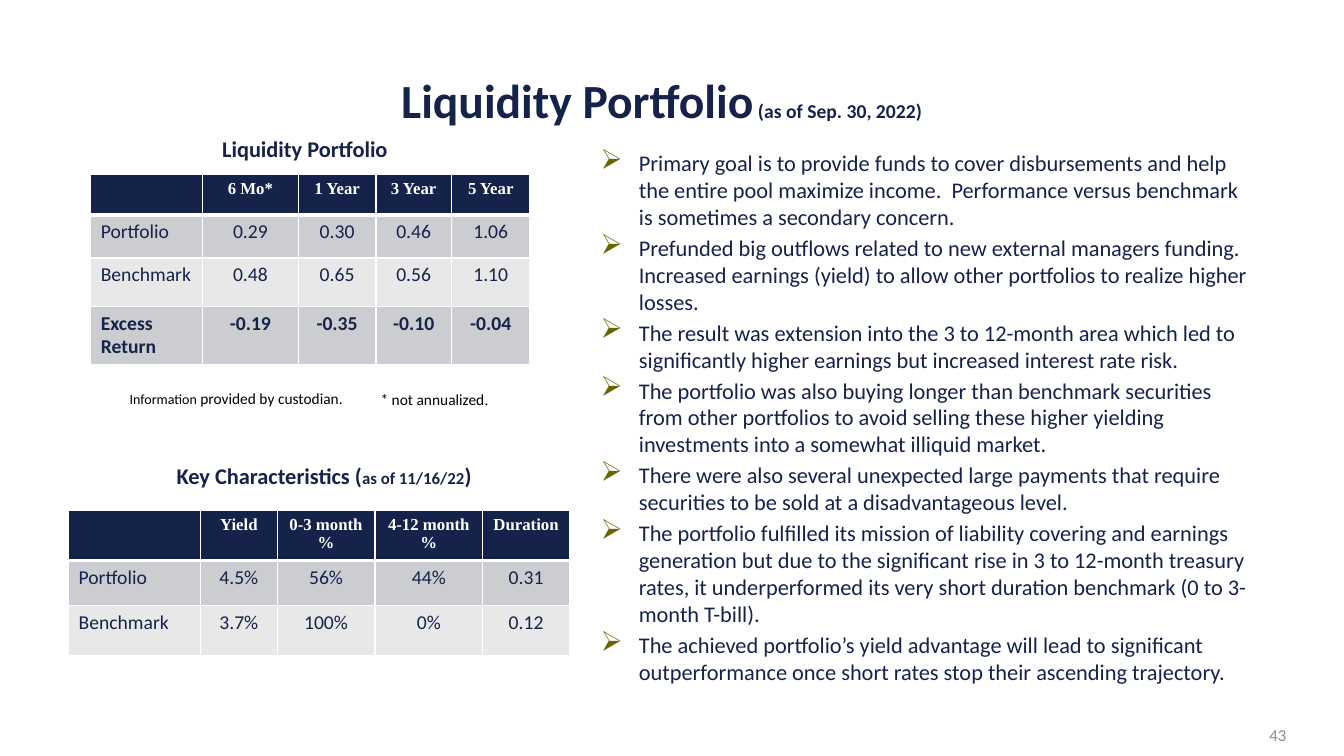
from dataclasses import dataclass
from typing import NamedTuple

from lxml.etree import SubElement
from pptx import Presentation
from pptx.dml.color import RGBColor
from pptx.enum.text import MSO_ANCHOR as Anchor, MSO_AUTO_SIZE as AutoSize, PP_ALIGN as Align
from pptx.oxml.ns import qn
from pptx.util import Inches, Pt

COLS, ROWS = 80, 45
UNIT = Inches(13.33) / COLS


@dataclass(frozen=True)
class Theme:
    navy: str = "15234A"
    white: str = "FFFFFF"
    black: str = "000000"
    bands: tuple = ("CCCDD0", "E8E8E9")
    olive: str = "666600"
    grey: str = "8C8D96"
    sans: str = "Calibri"
    serif: str = "Times New Roman"
    title: int = 34
    body: int = 16
    cell: int = 14
    small: int = 12
    note: int = 11
    fine: int = 10


T = Theme()


class Box(NamedTuple):
    """Left, top, width and height in grid units."""
    x: float
    y: float
    w: float
    h: float

    def emu(self):
        return [units(v) for v in self]


def units(n):
    return round(n * UNIT)


def add_run(p, text, size, color=T.navy, bold=False, font=T.sans):
    r = p.add_run()
    r.text = text
    r.font.size, r.font.bold, r.font.name = Pt(size), bold, font
    r.font.color.rgb = RGBColor.from_string(color)


def add_text(s, box, runs, align=Align.CENTER, anchor=Anchor.TOP, grow=True):
    """Place a one-paragraph text box; each run holds the arguments of add_run."""
    tf = s.shapes.add_textbox(*box.emu()).text_frame
    tf.word_wrap, tf.vertical_anchor = True, anchor
    tf.auto_size = AutoSize.SHAPE_TO_FIT_TEXT if grow else AutoSize.NONE
    p = tf.paragraphs[0]
    p.alignment = align
    for run in runs:
        add_run(p, *run)
    return p


def set_borders(cell, top, bottom):
    tc_pr = cell._tc.get_or_add_tcPr()
    for side, width in (("L", 1), ("R", 1), ("T", top), ("B", bottom)):
        ln = SubElement(tc_pr, qn(f"a:ln{side}"), w=str(Pt(width)))
        fill = SubElement(ln, qn("a:solidFill"))
        SubElement(fill, qn("a:srgbClr"), val=T.white)


def fill_cell(cell, text, row, col, bold):
    header = row == 0
    set_borders(cell, 3 if row == 1 else 1, 3 if header else 1)
    cell.fill.solid()
    cell.fill.fore_color.rgb = RGBColor.from_string(T.navy if header else T.bands[(row - 1) % 2])
    tf = cell.text_frame
    for i, line in enumerate(text.split("\n")):
        p = tf.add_paragraph() if i else tf.paragraphs[0]
        p.alignment = Align.CENTER if header or col else Align.LEFT
        if not line:
            p.font.size = Pt(T.small)
        elif header:
            add_run(p, line, T.small, T.white, True, T.serif)
        else:
            add_run(p, line, T.cell, T.navy, bold)


def table_panel(s, box, caption, offset, widths, heights, data, bold_row=None):
    """Caption in the box, with the table shifted from the box corner by the offset."""
    add_text(s, box, caption)
    at = Box(box.x + offset[0], box.y + offset[1], sum(widths), sum(heights))
    table = s.shapes.add_table(len(heights), len(widths), *at.emu()).table
    for column, width in zip(table.columns, widths):
        column.width = units(width)
    for i, (height, values) in enumerate(zip(heights, data)):
        table.rows[i].height = units(height)
        for j, value in enumerate(values):
            fill_cell(table.cell(i, j), value, i, j, i == bold_row)


def title_bar(s, box):
    p = add_text(s, box, [
        ("Liquidity Portfolio", T.title, T.navy, True),
        (" (as of Sep. 30, 2022)", T.cell, T.navy, True),
    ], anchor=Anchor.MIDDLE, grow=False)
    p.line_spacing = 0.9


def footnotes(s, box):
    add_text(s, Box(box.x, box.y, 19.98, box.h), [
        ("Information", T.fine, T.black),
        (" provided by custodian.", T.note, T.black),
    ])
    add_text(s, Box(box.x + box.w - 21.48, box.y + 0.06, 21.48, box.h), [
        ("* not annualized", T.note, T.black),
        (".", T.note, T.black, False, T.serif),
    ])


def commentary(s, box, points):
    tf = s.shapes.add_textbox(*box.emu()).text_frame
    tf.word_wrap, tf.auto_size = True, AutoSize.SHAPE_TO_FIT_TEXT
    indent = Inches(0.38)
    for i, point in enumerate(points):
        p = tf.add_paragraph() if i else tf.paragraphs[0]
        p_pr = p._p.get_or_add_pPr()
        p_pr.set("marL", str(indent))
        p_pr.set("indent", str(-indent))
        color = SubElement(p_pr, qn("a:buClr"))
        SubElement(color, qn("a:srgbClr"), val=T.olive)
        SubElement(p_pr, qn("a:buSzPct"), val="125000")
        SubElement(p_pr, qn("a:buChar"), char="➢")
        if i:
            p.space_before = Pt(3)
        add_run(p, point, T.body)


PERFORMANCE = [
    ("", "6 Mo*", "1 Year", "3 Year", "5 Year"),
    ("Portfolio", "0.29", "0.30", "0.46", "1.06"),
    ("Benchmark", "0.48", "0.65", "0.56", "1.10"),
    ("Excess Return", "-0.19", "-0.35", "-0.10", "-0.04"),
]
CHARACTERISTICS = [
    ("", "Yield", "0-3 month\n%", "4-12 month\n%", "Duration"),
    ("Portfolio", "4.5%", "56%", "44%", "0.31"),
    ("Benchmark", "3.7%", "100%", "0%", "0.12"),
]
POINTS = [
    "Primary goal is to provide funds to cover disbursements and help the entire pool maximize "
    "income.  Performance versus benchmark is sometimes a secondary concern.",
    "Prefunded big outflows related to new external managers funding.  Increased earnings (yield) "
    "to allow other portfolios to realize higher losses.",
    "The result was extension into the 3 to 12-month area which led to significantly higher "
    "earnings but increased interest rate risk.",
    "The portfolio was also buying longer than benchmark securities from other portfolios to "
    "avoid selling these higher yielding investments into a somewhat illiquid market.",
    "There were also several unexpected large payments that require securities to be sold at a "
    "disadvantageous level.",
    "The portfolio fulfilled its mission of liability covering and earnings generation but due to "
    "the significant rise in 3 to 12-month treasury rates, it underperformed its very short "
    "duration benchmark (0 to 3-month T-bill).",
    "The achieved portfolio’s yield advantage will lead to significant outperformance once short "
    "rates stop their ascending trajectory.",
]


def main():
    prs = Presentation()
    prs.slide_width, prs.slide_height = units(COLS), units(ROWS)
    s = prs.slides.add_slide(prs.slide_layouts[6])
    title_bar(s, Box(4.08, 4.62, 70.62, 3))
    table_panel(s, Box(2.94, 7.74, 30.42, 2.22),
                [("Liquidity Portfolio", T.body, T.navy, True)], (2.46, 2.64),
                (6.66, 5.7, 4.62, 4.5, 4.68), (2.4, 2.58, 2.88, 3.48), PERFORMANCE, bold_row=3)
    footnotes(s, Box(4.08, 22.86, 32.52, 1.74))
    table_panel(s, Box(4.08, 27.24, 30.42, 2.22), [
        ("Key Characteristics (", T.body, T.navy, True),
        ("as of 11/16/22", T.small, T.navy, True),
        (")", T.body, T.navy, True),
    ], (0, 3.12), (7.86, 4.56, 5.82, 6.42, 5.16), (2.94, 2.7, 2.94), CHARACTERISTICS)
    commentary(s, Box(35.16, 8.58, 40.2, 35.16), POINTS)
    add_text(s, Box(59.16, 42.54, 18, 2.4), [("43", T.small, T.grey)],
             Align.RIGHT, Anchor.MIDDLE, grow=False)
    prs.save("out.pptx")


if __name__ == "__main__":
    main()
